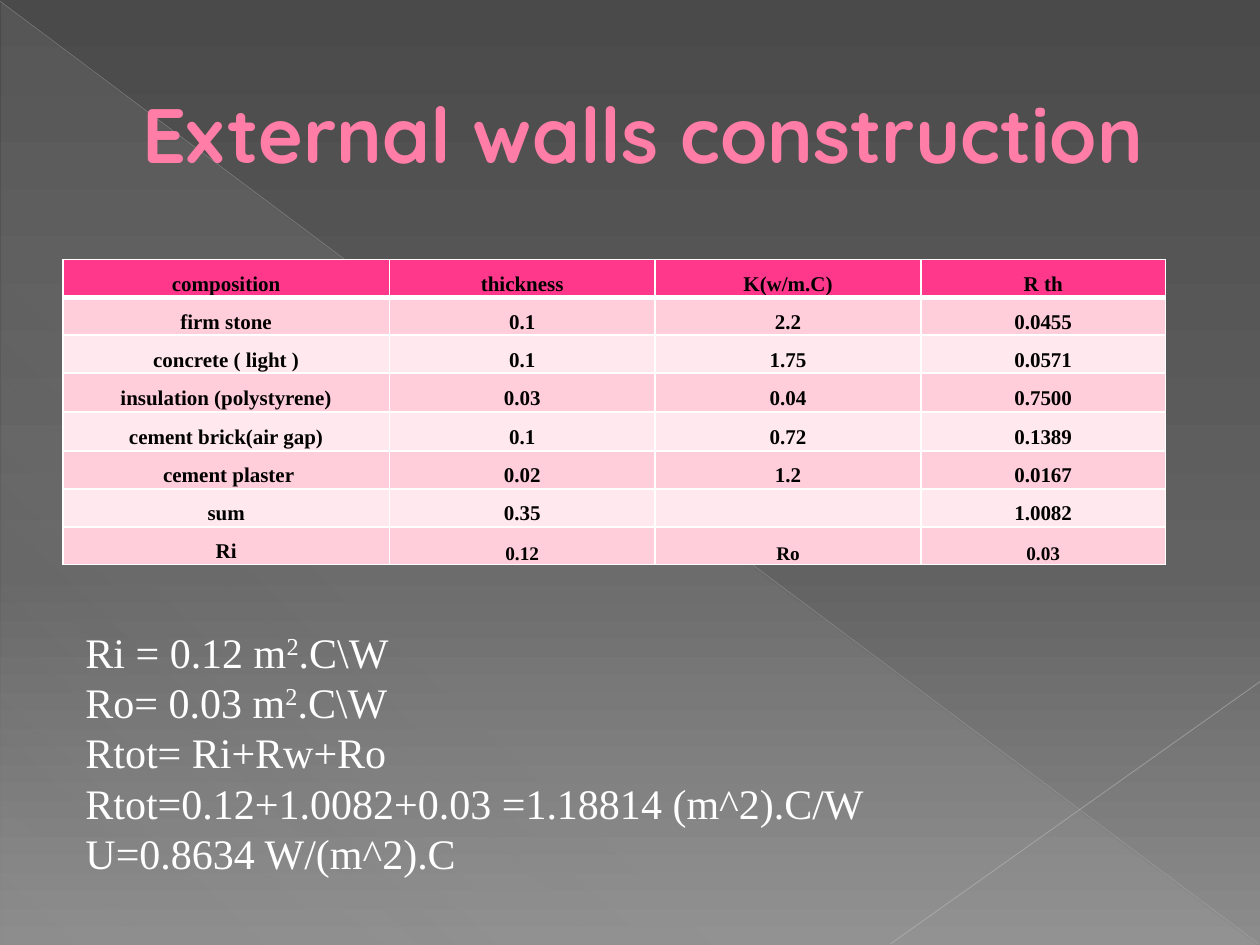
from lxml.etree import SubElement
from pptx import Presentation
from pptx.dml.color import RGBColor
from pptx.enum.shapes import MSO_CONNECTOR as Connector, MSO_SHAPE as Shape
from pptx.enum.text import MSO_ANCHOR as Anchor, PP_ALIGN as Align
from pptx.oxml.ns import qn
from pptx.util import Inches, Pt

COLORS = {
    "title": "FF7DA7", "title outline": "B12761", "header": "FF388C",
    "odd row": "FFCEDA", "even row": "FFE8EE", "white": "FFFFFF", "black": "000000",
    "triangle": "D2D2D2", "long line": "BFBFBF", "short line": "C6C6C6",
    "top": "4A4A4A", "middle": "626262", "bottom": "8C8C8C",
}
SERIF = "Times New Roman"


def write_text(frame, text, font=SERIF, size=12, color="black", bold=False,
               align=Align.LEFT, spacing=1.0, anchor=Anchor.TOP):
    frame.word_wrap = True
    frame.vertical_anchor = anchor
    for number, line in enumerate(text.split("\n")):
        paragraph = frame.add_paragraph() if number else frame.paragraphs[0]
        paragraph.alignment = align
        paragraph.line_spacing = spacing
        for position, part in enumerate(line.split("|")):
            if not part:
                paragraph._p.get_or_add_endParaRPr().set("sz", str(size * 100))
                continue
            run = paragraph.add_run()
            run.text = part
            run.font.name = font
            run.font.size = Pt(size)
            run.font.bold = bold
            run.font.color.rgb = RGBColor.from_string(COLORS[color])
            if position % 2:
                run.font._element.set("baseline", "30000")


def apply_gradient(fill, properties, stops, angle):
    fill.solid()
    solid = properties.find(qn("a:solidFill"))
    gradient = SubElement(properties, qn("a:gradFill"), rotWithShape="1")
    properties.replace(solid, gradient)
    stop_list = SubElement(gradient, qn("a:gsLst"))
    for position, color, alpha in stops:
        stop = SubElement(stop_list, qn("a:gs"), pos=str(position * 1000))
        value = SubElement(stop, qn("a:srgbClr"), val=COLORS[color])
        SubElement(value, qn("a:alpha"), val=str(alpha * 1000))
    SubElement(gradient, qn("a:lin"), ang=str(angle * 60000), scaled="0")


presentation = Presentation()
presentation.slide_width = Inches(10)
presentation.slide_height = Inches(7.5)
slide = presentation.slides.add_slide(presentation.slide_layouts[6])

background_fill = slide.background.fill
background_fill.solid()
background_properties = slide._element.cSld.find(qn("p:bg")).find(qn("p:bgPr"))
apply_gradient(background_fill, background_properties,
               [(0, "top", 100), (60, "middle", 100), (100, "bottom", 100)], 90)

triangle = slide.shapes.add_shape(
    Shape.RIGHT_TRIANGLE, Inches(0.01), Inches(0.02), Inches(9.98), Inches(7.48))
triangle.shadow.inherit = False
triangle.line.fill.background()
apply_gradient(triangle.fill, triangle._element.spPr,
               [(0, "triangle", 10), (70, "triangle", 8), (100, "triangle", 1)], 133)

for start, end, color, width, alpha in [
    ((0, 0.01), (9.99, 7.49), "long line", 0.39, 35),
    ((10, 5.41), (7.07, 7.49), "short line", 0.47, 45),
]:
    line = slide.shapes.add_connector(
        Connector.STRAIGHT, *[Inches(value) for value in start + end])
    line.line.width = Pt(width)
    line.line.color.rgb = RGBColor.from_string(COLORS[color])
    properties = line._element.spPr
    for value in properties.iter(qn("a:srgbClr")):
        SubElement(value, qn("a:alpha"), val=str(alpha * 1000))
    SubElement(properties, qn("a:effectLst"))

title = slide.shapes.add_textbox(Inches(0.5), Inches(0.29), Inches(9), Inches(1.53))
write_text(title.text_frame, "External walls construction", font="Quicksand",
           size=44, color="title", bold=True, anchor=Anchor.MIDDLE)
title_paragraph = title.text_frame.paragraphs[0]
title_paragraph._p.get_or_add_pPr().set("marL", str(Inches(0.53)))
title_properties = title_paragraph.runs[0].font._element
outline = SubElement(title_properties, qn("a:ln"), w=str(Pt(0.5)))
outline_fill = SubElement(outline, qn("a:solidFill"))
SubElement(outline_fill, qn("a:srgbClr"), val=COLORS["title outline"])
title_properties.insert(0, outline)

rows = [
    ["composition", "thickness", "K(w/m.C)", "R th"],
    ["firm stone", "0.1", "2.2", "0.0455"],
    ["concrete ( light )", "0.1", "1.75", "0.0571"],
    ["insulation (polystyrene)", "0.03", "0.04", "0.7500"],
    ["cement brick(air gap)", "0.1", "0.72", "0.1389"],
    [" cement plaster", "0.02", "1.2", "0.0167"],
    ["sum", "0.35", "", "1.0082"],
    ["Ri", "0.12", "Ro", "0.03"],
]
column_widths = [2.59, 2.11, 2.11, 1.94]
row_heights = [0.22, 0.22, 0.22, 0.31, 0.31, 0.22, 0.22, 0.22]
table = slide.shapes.add_table(
    len(rows), len(column_widths), Inches(0.5), Inches(2.06),
    Inches(sum(column_widths)), Inches(sum(row_heights))).table
for column, width in zip(table.columns, column_widths):
    column.width = Inches(width)
for row, height in zip(table.rows, row_heights):
    row.height = Inches(height)

for row_number, row in enumerate(rows):
    fill_name = "odd row" if row_number % 2 else "even row"
    if row_number == 0:
        fill_name = "header"
    for column_number, text in enumerate(row):
        cell = table.cell(row_number, column_number)
        small = row_number == len(rows) - 1 and column_number > 0
        cell.margin_left = cell.margin_right = Inches(0.07)
        cell.margin_top = cell.margin_bottom = 0
        write_text(cell.text_frame, text, size=11 if small else 12, bold=True,
                   align=Align.CENTER, spacing=1.5)
        cell.vertical_anchor = Anchor.BOTTOM if small else Anchor.MIDDLE
        cell_properties = cell._tc.get_or_add_tcPr()
        for side in ["L", "R", "T", "B"]:
            thick = (row_number, side) in [(0, "B"), (1, "T")]
            border = SubElement(cell_properties, qn(f"a:ln{side}"),
                                w=str(Pt(3 if thick else 1)))
            border_fill = SubElement(border, qn("a:solidFill"))
            SubElement(border_fill, qn("a:srgbClr"), val=COLORS["white"])
        cell.fill.solid()
        cell.fill.fore_color.rgb = RGBColor.from_string(COLORS[fill_name])

formulas = slide.shapes.add_textbox(Inches(0.58), Inches(4.92), Inches(6.58), Inches(2.12))
write_text(formulas.text_frame,
           "Ri = 0.12 m|2|.C\\W\n"
           "Ro= 0.03 m|2|.C\\W\n"
           "Rtot= Ri+Rw+Ro\n"
           "Rtot=0.12+1.0082+0.03 =1.18814 (m^2).C/W\n"
           "U=0.8634 W/(m^2).C",
           size=24, color="white")

presentation.save("out.pptx")
